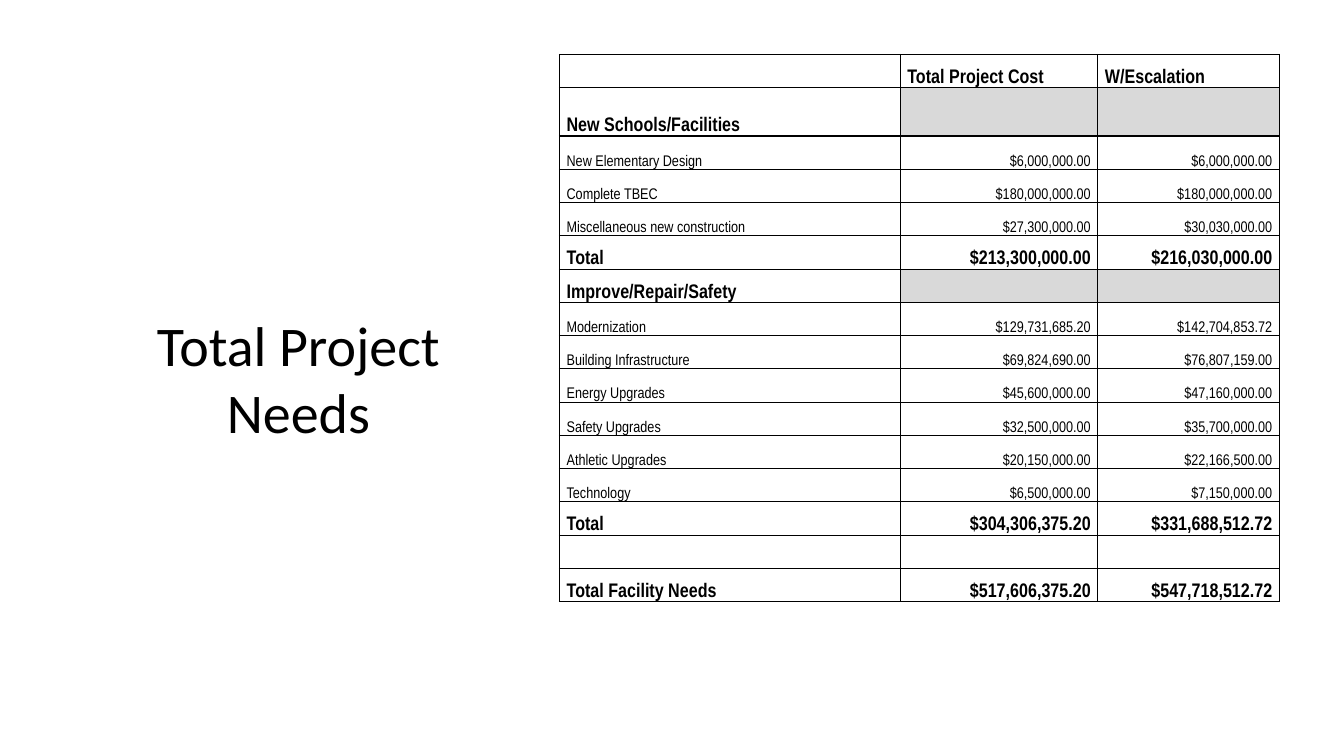
from lxml import etree
from pptx import Presentation
from pptx.dml.color import RGBColor
from pptx.enum.text import MSO_ANCHOR, PP_ALIGN
from pptx.oxml import parse_xml
from pptx.oxml.ns import nsdecls
from pptx.util import Inches, Pt

BLACK = RGBColor(0, 0, 0)
GREY = RGBColor(0xD9, 0xD9, 0xD9)

TITLE = "Total Project Needs"
# label, total project cost, cost with escalation
HEADER = ("", "Total Project Cost", "W/Escalation")
ROWS = [
    HEADER,
    ("New Schools/Facilities", "", ""),
    ("New Elementary Design", "$6,000,000.00", "$6,000,000.00"),
    ("Complete TBEC", "$180,000,000.00", "$180,000,000.00"),
    ("Miscellaneous new construction", "$27,300,000.00", "$30,030,000.00"),
    ("Total", "$213,300,000.00", "$216,030,000.00"),
    ("Improve/Repair/Safety", "", ""),
    ("Modernization", "$129,731,685.20", "$142,704,853.72"),
    ("Building Infrastructure", "$69,824,690.00", "$76,807,159.00"),
    ("Energy Upgrades", "$45,600,000.00", "$47,160,000.00"),
    ("Safety Upgrades", "$32,500,000.00", "$35,700,000.00"),
    ("Athletic Upgrades", "$20,150,000.00", "$22,166,500.00"),
    ("Technology", "$6,500,000.00", "$7,150,000.00"),
    ("Total", "$304,306,375.20", "$331,688,512.72"),
    ("", "", ""),
    ("Total Facility Needs", "$517,606,375.20", "$547,718,512.72"),
]
COL_WIDTHS = [2.84, 0.27, 0.27, 1.96, 1.8]
LABEL_COLS = 3
ROW_HEIGHT, FIRST_SECTION_HEIGHT = 0.33, 0.48


def set_borders(cell, hidden=()):
    """Draw 1 pt black edges, leaving out the hidden ones."""
    tcPr = cell._tc.get_or_add_tcPr()
    for i, edge in enumerate("LRTB"):
        ln = parse_xml(f'<a:ln{edge} w="12700" {nsdecls("a")}/>')
        if edge in hidden:
            etree.SubElement(ln, "{%s}noFill" % ln.nsmap["a"])
        else:
            fill = etree.SubElement(ln, "{%s}solidFill" % ln.nsmap["a"])
            etree.SubElement(fill, "{%s}srgbClr" % ln.nsmap["a"], val=str(BLACK))
        tcPr.insert(i, ln)


def add_title(s):
    tf = s.shapes.add_textbox(Inches(0.93), Inches(3.03), Inches(4.06), Inches(1.45)).text_frame
    tf.word_wrap = True
    p = tf.paragraphs[0]
    p.text = TITLE
    p.alignment = PP_ALIGN.CENTER
    p.font.name, p.font.size = "Calibri", Pt(40)
    p.font.color.rgb = BLACK


def fill_cell(cell, text, bold, align, shaded):
    cell.margin_left = cell.margin_right = Inches(0.07)
    cell.margin_top = cell.margin_bottom = 0
    cell.vertical_anchor = MSO_ANCHOR.BOTTOM
    if shaded:
        cell.fill.solid()
        cell.fill.fore_color.rgb = GREY
    else:
        cell.fill.background()
    p = cell.text_frame.paragraphs[0]
    p.text = text
    p.alignment = align
    p.line_spacing = 1.07
    p.font.name, p.font.size = "Arial Narrow", Pt(14 if bold else 11)
    p.font.bold = bold
    p.font.color.rgb = BLACK


def add_cost_table(s):
    table = s.shapes.add_table(len(ROWS), len(COL_WIDTHS), Inches(5.55), Inches(0.54),
                               Inches(sum(COL_WIDTHS)), Inches(5.39)).table
    table.first_row = table.horz_banding = False
    for col, width in zip(table.columns, COL_WIDTHS):
        col.width = Inches(width)

    for r, row in enumerate(ROWS):
        label, cost, _ = row
        table.rows[r].height = Inches(FIRST_SECTION_HEIGHT if r == 1 else ROW_HEIGHT)
        is_section = bool(label) and not cost
        bold = is_section or not label or label.startswith("Total")
        texts = [label] + [""] * (LABEL_COLS - 1) + list(row[1:])
        for c, text in enumerate(texts):
            is_amount = c >= LABEL_COLS
            align = PP_ALIGN.RIGHT if is_amount and row is not HEADER else PP_ALIGN.LEFT
            cell = table.cell(r, c)
            hidden = ""
            if not any(row):
                hidden = ("R", "LR", "L", "", "")[c]
            set_borders(cell, hidden)
            fill_cell(cell, text, bold, align, is_section and is_amount)
        if any(row):
            table.cell(r, 0).merge(table.cell(r, LABEL_COLS - 1))


def main():
    prs = Presentation()
    prs.slide_width, prs.slide_height = Inches(13.33), Inches(7.5)
    s = prs.slides.add_slide(prs.slide_layouts[6])
    add_title(s)
    add_cost_table(s)
    prs.save("out.pptx")


if __name__ == "__main__":
    main()
